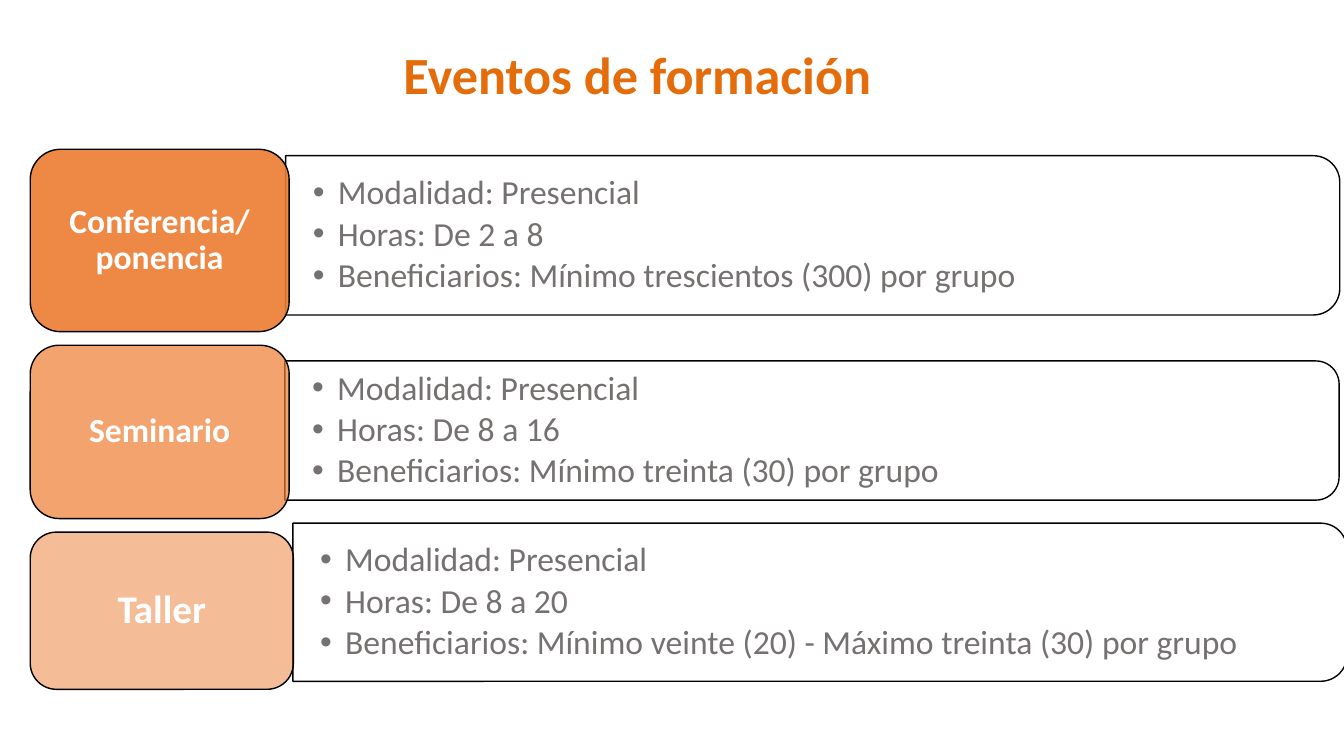
from pptx import Presentation
from pptx.dml.color import RGBColor
from pptx.enum.shapes import MSO_SHAPE
from pptx.enum.text import MSO_ANCHOR, MSO_AUTO_SIZE, PP_ALIGN
from pptx.oxml.ns import qn
from pptx.util import Pt
from lxml import etree

ROUNDED = MSO_SHAPE.ROUNDED_RECTANGLE
ROUNDED_SIDE = MSO_SHAPE.ROUND_2_SAME_RECTANGLE
MIDDLE = MSO_ANCHOR.MIDDLE
NO_FIT = MSO_AUTO_SIZE.NONE
CENTER, LEFT = PP_ALIGN.CENTER, PP_ALIGN.LEFT

# Content
TITLE = "Eventos de formación"
EVENTS = [
    {"name": "Conferencia/ ponencia", "size": 24, "opacity": 90,
     "card": (185, 130.3), "panel": (204, 111.2, 113.8),
     "facts": ["Modalidad: Presencial", "Horas: De 2 a 8",
               "Beneficiarios: Mínimo trescientos (300) por grupo"]},
    {"name": "Seminario", "size": 24, "opacity": 70,
     "card": (185, 123.8), "panel": (203.5, 257.8, 99.4),
     "facts": ["Modalidad: Presencial", "Horas: De 8 a 16",
               "Beneficiarios: Mínimo treinta (30) por grupo"]},
    {"name": "Taller", "size": 28, "opacity": 50,
     "card": (188, 112.3), "panel": (209.2, 373.7, 113),
     "facts": ["Modalidad: Presencial", "Horas: De 8 a 20",
               "Beneficiarios: Mínimo veinte (20) - Máximo treinta (30) por grupo"]},
]

# Theme and layout, lengths in points
THEME = {"font": "Calibri", "title": "E46C0A", "card": "ED7D31", "label": "FFFFFF",
         "panel": "FFFFFF", "fact": "767171", "line": "000000",
         "title_size": 37.3, "fact_size": 24}
CARD_LEFT, CARD_TOP, CARD_GAP = 21.6, 106.6, 9.7
PANEL_WIDTH, LIST_WIDTH, LIST_INSET = 753, 748, 19.4
BULLET_INDENT = 18


def color(name):
    return RGBColor.from_string(THEME[name])


def place(box, left, top, width, height):
    box.left, box.top, box.width, box.height = Pt(left), Pt(top), Pt(width), Pt(height)


def add_text(para, text, size, color_name, bold):
    span = para.add_run()
    span.text = text
    span.font.name, span.font.size, span.font.bold = THEME["font"], Pt(size), bold
    span.font.color.rgb = color(color_name)


def add_outlined(page, kind, left, top, width, height, fill_name):
    box = page.shapes.add_shape(kind, Pt(left), Pt(top), Pt(width), Pt(height))
    box.shadow.inherit = False
    box.fill.solid()
    box.fill.fore_color.rgb = color(fill_name)
    box.line.color.rgb = color("line")
    box.line.width = Pt(1)
    return box


def add_panel(page, left, top, height):
    # Turned a quarter so that the rounded corners face right
    shift = (PANEL_WIDTH - height) / 2
    panel = add_outlined(page, ROUNDED_SIDE, left + shift, top - shift,
                         height, PANEL_WIDTH, "panel")
    panel.rotation = 90


def fill_list(box, facts, left, top, height):
    place(box, left, top, LIST_WIDTH, height)
    frame = box.text_frame
    frame.word_wrap, frame.auto_size, frame.vertical_anchor = True, NO_FIT, MIDDLE
    frame.margin_left = frame.margin_right = Pt(LIST_INSET)
    frame.margin_top = frame.margin_bottom = Pt(0)
    for number, fact in enumerate(facts):
        para = frame.add_paragraph() if number else frame.paragraphs[0]
        para.alignment, para.line_spacing = LEFT, 0.9
        para.space_before, para.space_after = Pt(0), Pt(3.6)
        props = para._p.get_or_add_pPr()
        props.set("marL", str(Pt(BULLET_INDENT)))
        props.set("indent", str(-Pt(BULLET_INDENT)))
        etree.SubElement(props, qn("a:buFont"), typeface="Arial")
        etree.SubElement(props, qn("a:buChar"), char="•")
        add_text(para, fact, THEME["fact_size"], "fact", False)


def add_card(page, event, top):
    card = add_outlined(page, ROUNDED, CARD_LEFT, top, *event["card"], "card")
    tint = card.fill._xPr.find(qn("a:solidFill"))[0]
    etree.SubElement(tint, qn("a:alpha"), val=str(event["opacity"] * 1000))
    frame = card.text_frame
    frame.word_wrap, frame.vertical_anchor = True, MIDDLE
    para = frame.paragraphs[0]
    para.alignment, para.line_spacing = CENTER, 0.9
    add_text(para, event["name"], event["size"], "label", True)


def main():
    deck = Presentation()
    deck.slide_width, deck.slide_height = Pt(960), Pt(540)
    page = deck.slides.add_slide(deck.slide_layouts.get_by_name("Comparison"))

    # Title
    title = page.shapes.title
    place(title, 279.4, 26, 352, 52.6)
    frame = title.text_frame
    frame.word_wrap, frame.auto_size, frame.vertical_anchor = False, NO_FIT, MIDDLE
    frame.paragraphs[0].alignment = CENTER
    add_text(frame.paragraphs[0], TITLE, THEME["title_size"], "title", True)

    # Event rows: panel, list on top of it, then card
    bodies = [box for box in page.placeholders if box.placeholder_format.idx > 0]
    card_top = CARD_TOP
    for event, body in zip(EVENTS, bodies):
        left, top, height = event["panel"]
        add_panel(page, left, top, height)
        page.shapes._spTree.append(body._element)
        fill_list(body, event["facts"], left, top, height)
        add_card(page, event, card_top)
        card_top += event["card"][1] + CARD_GAP

    # Unused placeholders
    for body in bodies[len(EVENTS):]:
        page.shapes._spTree.remove(body._element)

    deck.save("out.pptx")


if __name__ == "__main__":
    main()
